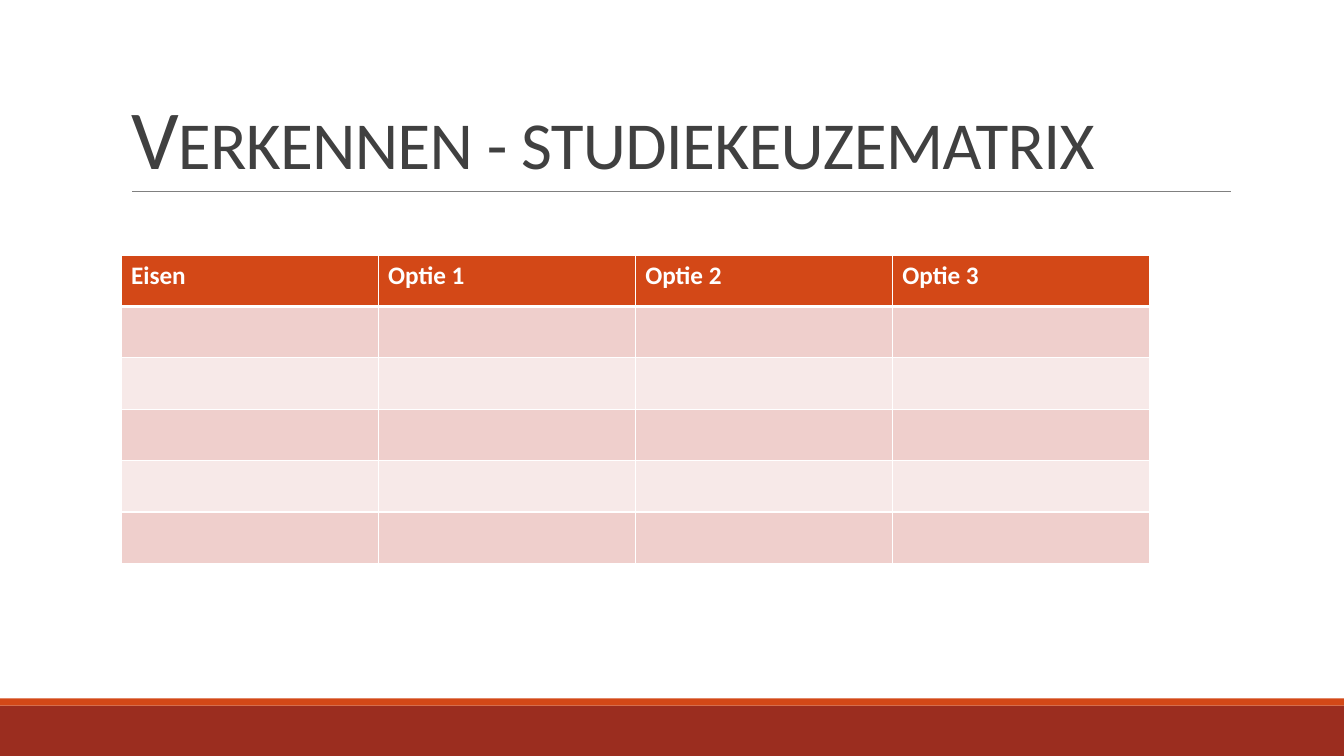
import pptx
import pptx.util
import pptx.dml.color
import pptx.enum.shapes
import pptx.enum.text
import pptx.oxml
import pptx.oxml.ns

Inches = pptx.util.Inches
Pt = pptx.util.Pt
RGBColor = pptx.dml.color.RGBColor

WHITE = RGBColor(0xFF, 0xFF, 0xFF)
ORANGE = RGBColor(0xD3, 0x48, 0x17)
BRICK = RGBColor(0x9B, 0x2D, 0x1F)
GRAY = RGBColor(0x80, 0x80, 0x80)
DARK = RGBColor(0x40, 0x40, 0x40)
BANDS = [RGBColor(0xF7, 0xE9, 0xE8), RGBColor(0xEF, 0xCF, 0xCC)]
FONT = "Calibri"
HEADERS = ["Eisen", "Optie 1", "Optie 2", "Optie 3"]
ROWS = 6
COL_W, ROW_H = 2.55, 0.51
LEFT = 1.2


def set_border(cell, side, color, width):
    tcPr = cell._tc.get_or_add_tcPr()
    ln = pptx.oxml.parse_xml(
        f'<a:{side} {pptx.oxml.ns.nsdecls("a")} w="{Pt(width)}">'
        f'<a:solidFill><a:srgbClr val="{color}"/></a:solidFill></a:{side}>')
    tcPr.append(ln)


prs = pptx.Presentation()
prs.slide_width, prs.slide_height = Inches(13.33), Inches(7.5)
s = prs.slides.add_slide(prs.slide_layouts[5])

for top, height, color in [(7, 0.5, BRICK), (6.93, 0.07, ORANGE)]:
    sp = s.shapes.add_shape(pptx.enum.shapes.MSO_SHAPE.RECTANGLE,
                            0, Inches(top), prs.slide_width, Inches(height))
    sp.shadow.inherit = False
    sp.fill.solid()
    sp.fill.fore_color.rgb = color
    sp.line.fill.background()

rule = s.shapes.add_connector(pptx.enum.shapes.MSO_CONNECTOR.STRAIGHT,
                              Inches(1.31), Inches(1.9), Inches(12.21), Inches(1.9))
rule.line.color.rgb = GRAY
rule.line.width = Pt(0.5)
rule._element.spPr.append(pptx.oxml.parse_xml(
    f'<a:effectLst {pptx.oxml.ns.nsdecls("a")}/>'))

title = s.shapes.title
title.left, title.top = Inches(LEFT), Inches(0.31)
title.width, title.height = Inches(11), Inches(1.59)
tf = title.text_frame
tf.text = "Verkennen - studiekeuzematrix"
tf.word_wrap = True
tf.auto_size = pptx.enum.text.MSO_AUTO_SIZE.NONE
tf.vertical_anchor = pptx.enum.text.MSO_ANCHOR.BOTTOM
p = tf.paragraphs[0]
p.alignment = pptx.enum.text.PP_ALIGN.LEFT
p.line_spacing = 0.85
r = p.runs[0]
r.font.name = FONT
r.font.size = Pt(60)
r.font.color.rgb = DARK
rPr = r._r.get_or_add_rPr()
rPr.set("cap", "small")
rPr.set("spc", "-50")

table = s.shapes.add_table(ROWS, len(HEADERS), Inches(LEFT), Inches(2.53),
                           Inches(COL_W * len(HEADERS)), Inches(ROW_H * ROWS)).table
for row_no in range(ROWS):
    for col_no, header in enumerate(HEADERS):
        cell = table.cell(row_no, col_no)
        for side in ["lnL", "lnR", "lnT", "lnB"]:
            under_header = (row_no, side) in [(0, "lnB"), (1, "lnT")]
            set_border(cell, side, WHITE, 3 if under_header else 1)
        cell.fill.solid()
        cell.fill.fore_color.rgb = BANDS[row_no % 2] if row_no else ORANGE
        if row_no == 0:
            cell.text_frame.text = header
            r = cell.text_frame.paragraphs[0].runs[0]
            r.font.name = FONT
            r.font.size = Pt(18)
            r.font.bold = True
            r.font.color.rgb = WHITE

prs.save("out.pptx")
